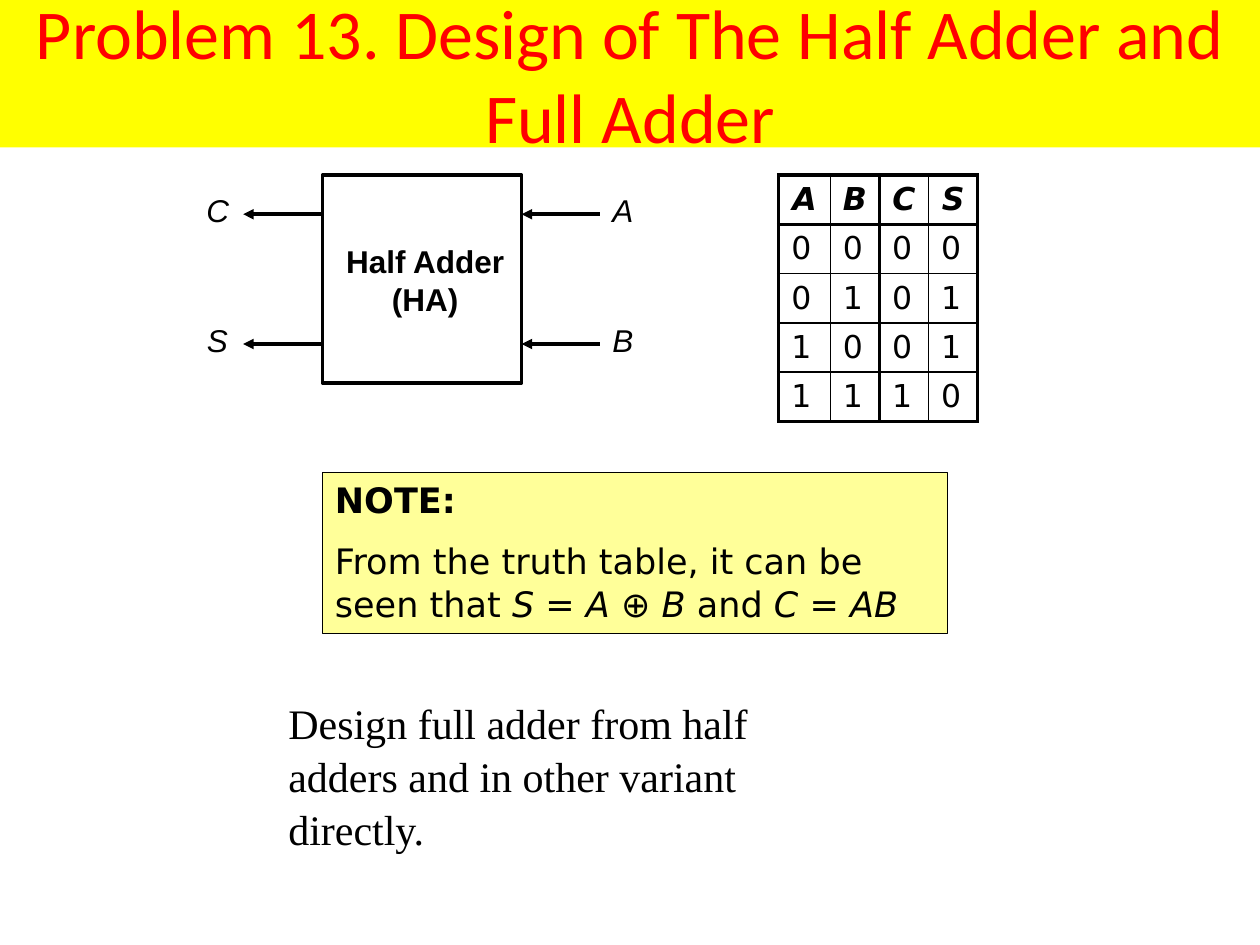
from lxml import etree
from pptx import Presentation
from pptx import util as u
from pptx.dml.color import RGBColor
from pptx.enum import shapes, text
from pptx.oxml import ns

BLACK = RGBColor(0, 0, 0)
RED = RGBColor(255, 0, 0)
YELLOW = RGBColor(255, 255, 0)
PALE_YELLOW = RGBColor(255, 255, 153)

THICK = 2.25
THIN = 1
TRUTH_ROWS = ["ABCS", "0000", "0101", "1001", "1110"]
COLUMN_WIDTHS = [0.41, 0.39, 0.39, 0.39]
ROW_HEIGHT = 0.39
VERTICAL_RULES = [THICK, THIN, THICK, THIN, THICK]
HORIZONTAL_RULES = [THICK, THICK, THIN, THIN, THIN, THICK]


def box(left, top, width, height):
    return [u.Inches(value) for value in (left, top, width, height)]


def add_run(paragraph, content, font, size, color=BLACK, bold=False, italic=False):
    run = paragraph.add_run()
    run.text = content
    run.font.name = font
    run.font.size = u.Pt(size)
    run.font.color.rgb = color
    run.font.bold = bold
    run.font.italic = italic


def add_title(slide, content):
    title = slide.shapes.title
    title.left, title.top, title.width, title.height = box(0, 0, 10, 1.17)
    title.fill.solid()
    title.fill.fore_color.rgb = YELLOW
    frame = title.text_frame
    frame.auto_size = text.MSO_AUTO_SIZE.NONE
    frame.vertical_anchor = text.MSO_ANCHOR.MIDDLE
    paragraph = frame.paragraphs[0]
    paragraph.alignment = text.PP_ALIGN.CENTER
    add_run(paragraph, content, "Calibri", 40, RED)


def add_rectangle(slide, place, line_width, fill=None):
    shape = slide.shapes.add_shape(shapes.MSO_SHAPE.RECTANGLE, *box(*place))
    shape.shadow.inherit = False
    if fill is None:
        shape.fill.background()
    else:
        shape.fill.solid()
        shape.fill.fore_color.rgb = fill
    shape.line.color.rgb = BLACK
    shape.line.width = u.Pt(line_width)
    return shape


def add_arrow(slide, start_x, end_x, y):
    arrow = slide.shapes.add_connector(
        shapes.MSO_CONNECTOR.STRAIGHT,
        u.Inches(start_x), u.Inches(y), u.Inches(end_x), u.Inches(y))
    arrow.line.color.rgb = BLACK
    arrow.line.width = u.Pt(2)
    properties = arrow.line._get_or_add_ln()
    etree.SubElement(properties, ns.qn("a:tailEnd"), type="triangle")
    etree.SubElement(arrow._element.spPr, ns.qn("a:effectLst"))


def add_label(slide, place, lines, bold=False, italic=False):
    frame = slide.shapes.add_textbox(*box(*place)).text_frame
    frame.word_wrap = False
    for index, line in enumerate(lines):
        paragraph = frame.add_paragraph() if index else frame.paragraphs[0]
        paragraph.alignment = text.PP_ALIGN.CENTER
        add_run(paragraph, line, "Arial", 18, bold=bold, italic=italic)


def add_half_adder(slide):
    add_rectangle(slide, (2.56, 1.39, 1.58, 1.65), 2)
    add_label(slide, (2.64, 1.87, 1.47, 0.7), ["Half Adder", "(HA)"], bold=True)
    for y, output_name, input_name in [(1.7, "C", "A"), (2.73, "S", "B")]:
        add_arrow(slide, 2.56, 1.93, y)
        add_arrow(slide, 4.76, 4.14, y)
        add_label(slide, (1.54, y - 0.23, 0.37, 0.4), [output_name], italic=True)
        add_label(slide, (4.76, y - 0.23, 0.37, 0.4), [input_name], italic=True)


def set_borders(cell, widths):
    properties = cell._tc.get_or_add_tcPr()
    for index, (side, width) in enumerate(zip("LRTB", widths)):
        line = etree.Element(ns.qn(f"a:ln{side}"), w=str(u.Pt(width)))
        fill = etree.SubElement(line, ns.qn("a:solidFill"))
        etree.SubElement(fill, ns.qn("a:srgbClr"), val=str(BLACK))
        properties.insert(index, line)


def add_truth_table(slide):
    frame = slide.shapes.add_table(
        len(TRUTH_ROWS), len(COLUMN_WIDTHS),
        *box(6.18, 1.39, sum(COLUMN_WIDTHS), ROW_HEIGHT * len(TRUTH_ROWS)))
    table = frame.table
    table.first_row = False
    table.horz_banding = False
    for column, width in zip(table.columns, COLUMN_WIDTHS):
        column.width = u.Inches(width)
    for row_index, values in enumerate(TRUTH_ROWS):
        table.rows[row_index].height = u.Inches(ROW_HEIGHT)
        header = row_index == 0
        for column_index, value in enumerate(values):
            cell = table.cell(row_index, column_index)
            cell.fill.background()
            paragraph = cell.text_frame.paragraphs[0]
            if header:
                paragraph.alignment = text.PP_ALIGN.CENTER
            add_run(paragraph, value, "DejaVu Sans", 18, bold=header, italic=header)
            set_borders(cell, VERTICAL_RULES[column_index:column_index + 2]
                        + HORIZONTAL_RULES[row_index:row_index + 2])


def add_note(slide):
    note = add_rectangle(slide, (2.56, 3.75, 4.96, 1.28), 0.75, PALE_YELLOW)
    frame = note.text_frame
    frame.word_wrap = True
    frame.vertical_anchor = text.MSO_ANCHOR.TOP
    heading = frame.paragraphs[0]
    heading.alignment = text.PP_ALIGN.LEFT
    add_run(heading, "NOTE:", "DejaVu Sans", 20, bold=True)
    statement = frame.add_paragraph()
    statement.alignment = text.PP_ALIGN.LEFT
    statement.space_before = u.Pt(11)
    pieces = ["From the truth table, it can be seen that ", "S", " = ", "A ",
              "⊕ ", "B", " and ", "C", " = ", "AB"]
    for index, piece in enumerate(pieces):
        add_run(statement, piece, "DejaVu Sans", 20, italic=index % 2 == 1)


def add_task(slide, content):
    frame = slide.shapes.add_textbox(*box(2.19, 5.47, 4.77, 1.31)).text_frame
    frame.word_wrap = True
    paragraph = frame.paragraphs[0]
    paragraph.line_spacing = 1.05
    add_run(paragraph, content, "Times New Roman", 24)


def main():
    presentation = Presentation()
    presentation.slide_width = u.Inches(10)
    presentation.slide_height = u.Inches(7.5)
    slide = presentation.slides.add_slide(presentation.slide_layouts[5])
    add_title(slide, "Problem 13. Design of The Half Adder and Full Adder")
    add_truth_table(slide)
    add_half_adder(slide)
    add_note(slide)
    add_task(slide, "Design full adder from half adders and in other variant directly.")
    presentation.save("out.pptx")


if __name__ == "__main__":
    main()
